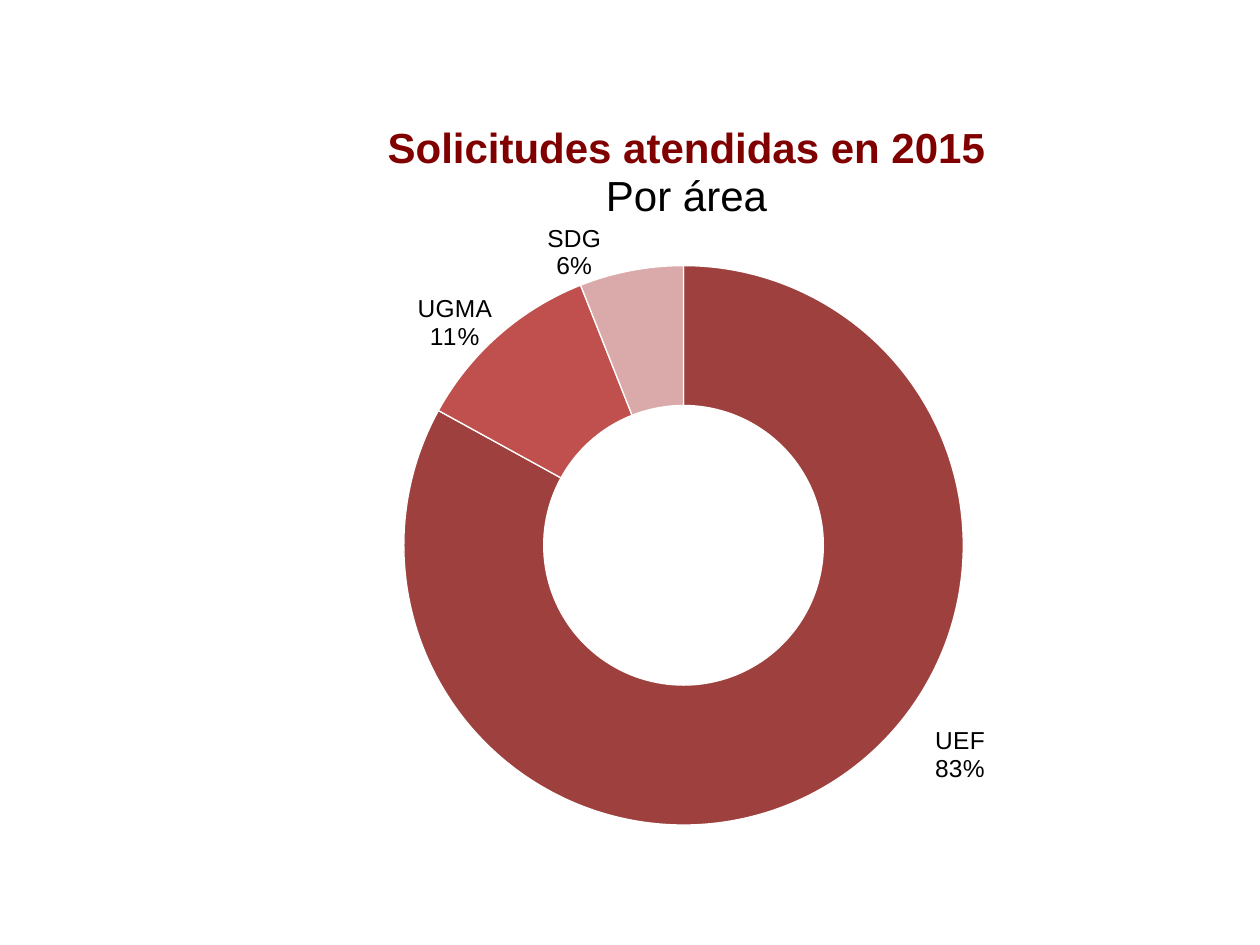
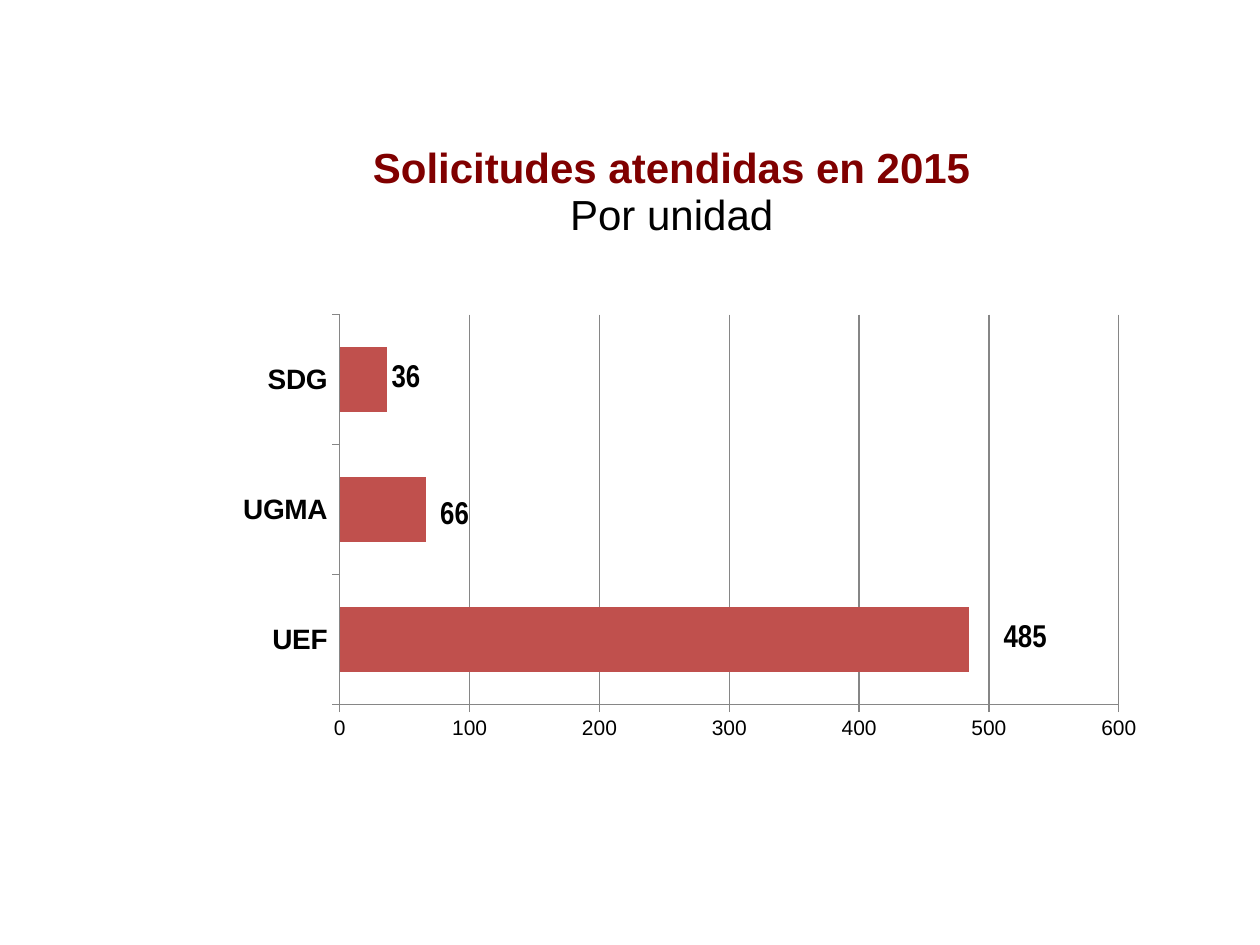
from dataclasses import dataclass
from typing import Any

from lxml.etree import SubElement
from pptx import Presentation
from pptx.chart.chart import Chart
from pptx.chart.data import CategoryChartData
from pptx.dml.color import RGBColor
from pptx.enum.chart import XL_CHART_TYPE as ChartType
from pptx.enum.chart import XL_LABEL_POSITION as LabelPosition
from pptx.enum.chart import XL_TICK_MARK as Tick
from pptx.oxml import parse_xml
from pptx.oxml.ns import nsdecls, qn
from pptx.util import Cm, Pt

COLORS = {
    "title": "800000",
    "text": "000000",
    "dark": "9E413E",
    "red": "C0504D",
    "pale": "D9AAA9",
    "axis": "868686",
    "gap": "FFFFFF",
}
HEADING = "Solicitudes atendidas en 2015"
AREAS = ("UEF", "UGMA", "SDG")

HEADING_FONT = {"name": "Arial", "size": Pt(24), "bold": True}
SUBHEADING_FONT = {"name": "Arial", "size": Pt(24), "bold": False}
SHARE_FONT = {"name": "Arial", "size": Pt(14), "bold": False}
COUNT_FONT = {"name": "Arial Narrow", "size": Pt(18), "bold": True}
AREA_FONT = {"name": "Arial", "size": Pt(16), "bold": True}
SCALE_FONT = {"name": "Arial", "size": Pt(12), "bold": False}


@dataclass(frozen=True)
class Panel:
    """A chart slide; title and plot places are fractions of the chart."""
    subheading: str
    kind: ChartType
    width: float
    height: float
    values: tuple[int, ...]
    title_at: tuple[float, float]
    plot_box: tuple[float, float, float, float]
    label_font: dict[str, Any]
    label_shifts: tuple[tuple[float, float], ...]


BY_AREA = Panel(
    "Por área", ChartType.DOUGHNUT, 20.14, 14.55, (83, 11, 6),
    (0.2, 0), (0.22, 0.2, 0.56, 0.78),
    SHARE_FONT, ((0.17, 0.04), (-0.09, -0.09), (-0.07, -0.12)),
)
BY_UNIT = Panel(
    "Por unidad", ChartType.BAR_CLUSTERED, 19.63, 13.11, (485, 66, 36),
    (0.19, 0.03), (0.16, 0.3, 0.8, 0.6),
    COUNT_FONT, ((0.03, 0), (0.01, 0.01), (0, 0)),
)


def rgb(color: str) -> RGBColor:
    return RGBColor.from_string(COLORS[color])


def format_font(font: Any, values: dict[str, Any], color: str = "text") -> None:
    for attribute, value in values.items():
        setattr(font, attribute, value)
    font.color.rgb = rgb(color)


def set_layout(parent: Any, index: int, *place: float) -> None:
    """Put a manual layout (x, y and maybe w, h) at the given child index."""
    for old in parent.findall(qn("c:layout")):
        parent.remove(old)
    layout = parse_xml(f"<c:layout {nsdecls('c')}><c:manualLayout/></c:layout>")
    manual = layout[0]
    if len(place) == 4:
        SubElement(manual, qn("c:layoutTarget")).set("val", "inner")
    if parent.tag != qn("c:dLbl"):
        for mode in ("xMode", "yMode"):
            SubElement(manual, qn(f"c:{mode}")).set("val", "edge")
    for side, fraction in zip("xywh", place):
        SubElement(manual, qn(f"c:{side}")).set("val", str(fraction))
    parent.insert(index, layout)


def add_title(chart: Chart, panel: Panel) -> None:
    frame = chart.chart_title.text_frame
    heading = frame.paragraphs[0]
    subheading = frame.add_paragraph()
    for line, text, font, color in (
        (heading, HEADING, HEADING_FONT, "title"),
        (subheading, panel.subheading, SUBHEADING_FONT, "text"),
    ):
        run = line.add_run()
        run.text = text
        format_font(run.font, font, color)
    set_layout(chart.chart_title._element, 1, *panel.title_at)


def hide_leader_lines(labels: Any) -> None:
    tag = qn("c:showLeaderLines")
    switch = labels.find(tag)
    if switch is None:
        switch = SubElement(labels, tag)
    switch.set("val", "0")


def add_labels(series: Any, panel: Panel) -> None:
    shares = panel.kind == ChartType.DOUGHNUT
    labels = series.data_labels
    labels.show_value = not shares
    labels.show_percentage = labels.show_category_name = shares
    format_font(labels.font, panel.label_font)
    for index, shift in enumerate(panel.label_shifts):
        label = series.points[index].data_label
        format_font(label.font, panel.label_font)
        if not shares:
            label.position = LabelPosition.OUTSIDE_END
        element = series._element.xpath(f"c:dLbls/c:dLbl[c:idx/@val='{index}']")[0]
        set_layout(element, 1, *shift)
        if shares:
            for flag, shown in (("Val", "0"), ("CatName", "1"), ("Percent", "1")):
                element.find(qn(f"c:show{flag}")).set("val", shown)
            separator = parse_xml(f"<c:separator {nsdecls('c')}>\n</c:separator>")
            element.find(qn("c:showBubbleSize")).addnext(separator)
    hide_leader_lines(series._element.find(qn("c:dLbls")))


def add_panel(deck: Any, panel: Panel) -> Chart:
    slide = deck.slides.add_slide(deck.slide_layouts[6])
    data = CategoryChartData()
    data.categories = AREAS
    data.add_series("Series 1", panel.values)
    chart = slide.shapes.add_chart(
        panel.kind, Cm(3.71), Cm(2.41), Cm(panel.width), Cm(panel.height), data
    ).chart
    format_font(chart.font, {"name": "Calibri", "size": Pt(18)})
    chart.has_legend = False
    add_title(chart, panel)
    set_layout(chart._chartSpace.chart.plotArea, 0, *panel.plot_box)
    add_labels(chart.plots[0].series[0], panel)
    return chart


def color_ring(chart: Chart) -> None:
    chart.plots[0].vary_by_categories = True
    points = chart.plots[0].series[0].points
    for index, color in enumerate(("dark", "red", "pale")):
        segment = points[index].format
        segment.fill.solid()
        segment.fill.fore_color.rgb = rgb(color)
        segment.line.color.rgb = rgb("gap")
        segment.line.width = Pt(0.75)


def style_bars(chart: Chart) -> None:
    plot = chart.plots[0]
    plot.vary_by_categories = False
    plot.gap_width = 100
    bars = plot.series[0].format.fill
    bars.solid()
    bars.fore_color.rgb = rgb("red")

    areas, scale = chart.category_axis, chart.value_axis
    for axis, font in ((areas, AREA_FONT), (scale, SCALE_FONT)):
        axis.major_tick_mark = Tick.OUTSIDE
        axis.minor_tick_mark = Tick.NONE
        axis.format.line.color.rgb = rgb("axis")
        format_font(axis.tick_labels.font, font)
    for attribute, value in {
        "minimum_scale": 0, "maximum_scale": 600,
        "major_unit": 100, "has_major_gridlines": True,
    }.items():
        setattr(scale, attribute, value)
    scale.major_gridlines.format.line.color.rgb = rgb("axis")


def main() -> None:
    deck = Presentation()
    deck.slide_width, deck.slide_height = Cm(25.4), Cm(19.05)
    color_ring(add_panel(deck, BY_AREA))
    style_bars(add_panel(deck, BY_UNIT))
    deck.save("out.pptx")


if __name__ == "__main__":
    main()
